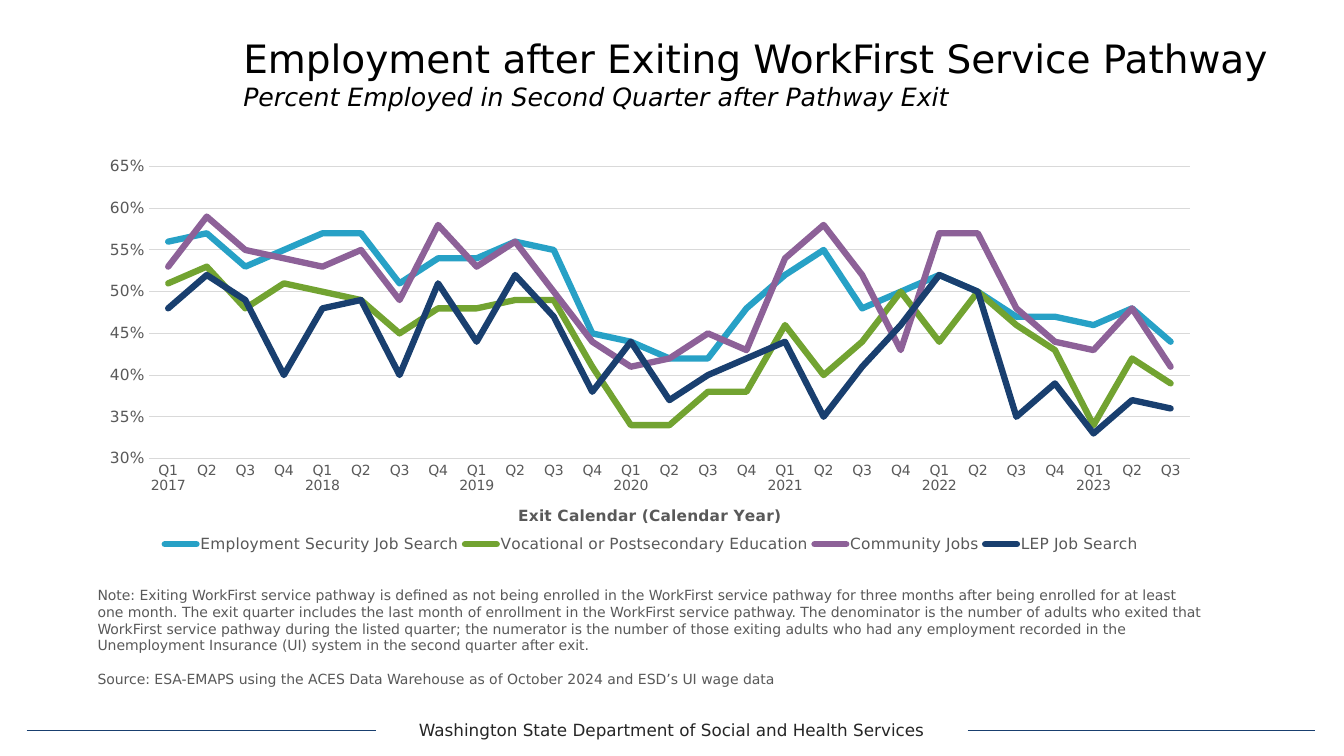
from dataclasses import dataclass

from lxml import etree
from pptx import Presentation
from pptx import util as u
from pptx.chart import data as feed
from pptx.dml.color import RGBColor
from pptx.enum import chart as kinds, shapes, text
from pptx.oxml import ns

Pt = u.Pt
FONT = "DejaVu Sans"
BLACK = RGBColor(0x00, 0x00, 0x00)
DARK = RGBColor(0x26, 0x26, 0x26)
GRAY = RGBColor(0x59, 0x59, 0x59)
PALE = RGBColor(0xD9, 0xD9, 0xD9)
NAVY = RGBColor(0x19, 0x3F, 0x6F)
TEAL = RGBColor(0x27, 0xA1, 0xC6)
GREEN = RGBColor(0x72, 0xA3, 0x31)
PLUM = RGBColor(0x8D, 0x61, 0x98)

NOTE = (
    "Note: Exiting WorkFirst service pathway is defined as not being enrolled in the "
    "WorkFirst service pathway for three months after being enrolled for at least one month. "
    "The exit quarter includes the last month of enrollment in the WorkFirst service pathway. "
    "The denominator is the number of adults who exited that WorkFirst service pathway during "
    "the listed quarter; the numerator is the number of those exiting adults who had any "
    "employment recorded in the Unemployment Insurance (UI) system in the second quarter after exit."
)
SOURCE = "Source: ESA-EMAPS using the ACES Data Warehouse as of October 2024 and ESD’s UI wage data"


@dataclass
class Box:
    left: float
    top: float
    width: float
    height: float

    def sides(self) -> tuple:
        return Pt(self.left), Pt(self.top), Pt(self.width), Pt(self.height)


@dataclass
class Trend:
    name: str
    color: RGBColor
    rates: list[float]


@dataclass
class Rule:
    start: float
    end: float


CHART = Box(62.6, 105.8, 803.5, 309.6)
PLOT = Box(43.8, 13.2, 743.6, 208.6)
KEY = Box(50.7, 274, 704, 18)
LABEL = Box(305.6, 252.7, 0, 0)
RULES = [Rule(19, 268.6), Rule(691.2, 939.2)]
TRENDS = [
    Trend("Employment Security Job Search", TEAL, [
        0.56, 0.57, 0.53, 0.55, 0.57, 0.57, 0.51, 0.54, 0.54,
        0.56, 0.55, 0.45, 0.44, 0.42, 0.42, 0.48, 0.52, 0.55,
        0.48, 0.5, 0.52, 0.5, 0.47, 0.47, 0.46, 0.48, 0.44]),
    Trend("Vocational or Postsecondary Education", GREEN, [
        0.51, 0.53, 0.48, 0.51, 0.5, 0.49, 0.45, 0.48, 0.48,
        0.49, 0.49, 0.41, 0.34, 0.34, 0.38, 0.38, 0.46, 0.4,
        0.44, 0.5, 0.44, 0.5, 0.46, 0.43, 0.34, 0.42, 0.39]),
    Trend("Community Jobs", PLUM, [
        0.53, 0.59, 0.55, 0.54, 0.53, 0.55, 0.49, 0.58, 0.53,
        0.56, 0.5, 0.44, 0.41, 0.42, 0.45, 0.43, 0.54, 0.58,
        0.52, 0.43, 0.57, 0.57, 0.48, 0.44, 0.43, 0.48, 0.41]),
    Trend("LEP Job Search", NAVY, [
        0.48, 0.52, 0.49, 0.4, 0.48, 0.49, 0.4, 0.51, 0.44,
        0.52, 0.47, 0.38, 0.44, 0.37, 0.4, 0.42, 0.44, 0.35,
        0.41, 0.46, 0.52, 0.5, 0.35, 0.39, 0.33, 0.37, 0.36]),
]


def style(font, size: float, color: RGBColor, bold: bool = False, slant: bool = False) -> None:
    font.name, font.size = FONT, Pt(size)
    font.bold, font.italic = bold, slant
    font.color.rgb = color


def add_run(para, words: str, size: float, color: RGBColor, **looks: bool) -> None:
    run = para.add_run()
    run.text = words
    style(run.font, size, color, **looks)


def add_text(slide, box: Box, lines: list[str], size: float, color: RGBColor,
             align=text.PP_ALIGN.LEFT, gap: float = 0) -> None:
    frame = slide.shapes.add_textbox(*box.sides()).text_frame
    frame.word_wrap = True
    for spot, words in enumerate(lines):
        para = frame.add_paragraph() if spot else frame.paragraphs[0]
        para.alignment = align
        if spot:
            para.space_before = Pt(gap)
        add_run(para, words, size, color)


def add_title(slide) -> None:
    title = slide.shapes.title
    title.left, title.top, title.width, title.height = Box(166.6, 0, 759.6, 104.4).sides()
    frame = title.text_frame
    frame.word_wrap = True
    frame.vertical_anchor = text.MSO_ANCHOR.MIDDLE
    para = frame.paragraphs[0]
    para.alignment = text.PP_ALIGN.LEFT
    add_run(para, "Employment after Exiting WorkFirst Service Pathway", 27.9, BLACK)
    para.add_line_break()
    add_run(para, "Percent Employed in Second Quarter after Pathway Exit", 18, BLACK, slant=True)


def add_rule(slide, rule: Rule) -> None:
    line = slide.shapes.add_connector(
        shapes.MSO_CONNECTOR.STRAIGHT, Pt(rule.start), Pt(521.6), Pt(rule.end), Pt(521.6))
    line.line.color.rgb = NAVY
    line.line.width = Pt(0.75)
    etree.SubElement(line._element.spPr, ns.qn("a:effectLst"))


def place(owner, box: Box, inner: bool = False) -> None:
    for old in owner.findall(ns.qn("c:layout")):
        owner.remove(old)
    layout = etree.Element(ns.qn("c:layout"))
    manual = etree.SubElement(layout, ns.qn("c:manualLayout"))
    parts = [("layoutTarget", "inner")] if inner else []
    parts += [("xMode", "edge"), ("yMode", "edge"),
              ("x", box.left / CHART.width), ("y", box.top / CHART.height)]
    if box.width:
        parts += [("w", box.width / CHART.width), ("h", box.height / CHART.height)]
    for tag, value in parts:
        etree.SubElement(manual, ns.qn(f"c:{tag}")).set("val", str(value))
    ahead = owner.find(ns.qn("c:tx"))
    if ahead is None:
        ahead = owner.find(ns.qn("c:legendPos"))
    if ahead is None:
        owner.insert(0, layout)
    else:
        ahead.addnext(layout)


def add_chart(slide) -> None:
    table = feed.CategoryChartData(number_format="0%")
    table.categories = [
        f"Q{spot % 4 + 1}" + ("" if spot % 4 else f"\n{2017 + spot // 4}")
        for spot in range(len(TRENDS[0].rates))]
    for trend in TRENDS:
        table.add_series(trend.name, trend.rates)
    chart = slide.shapes.add_chart(kinds.XL_CHART_TYPE.LINE, *CHART.sides(), table).chart
    style(chart.font, 10, BLACK)
    chart.has_title = False
    chart.plots[0].vary_by_categories = False
    for line, trend in zip(chart.plots[0].series, TRENDS):
        line.smooth = False
        line.marker.style = kinds.XL_MARKER_STYLE.NONE
        line.format.line.color.rgb = trend.color
        line.format.line.width = Pt(4.5)
        line.format.line._ln.set("cap", "rnd")

    base, side = chart.category_axis, chart.value_axis
    for axis, size in ((base, 10), (side, 11)):
        axis.major_tick_mark = axis.minor_tick_mark = kinds.XL_TICK_MARK.NONE
        style(axis.tick_labels.font, size, GRAY)
    base.has_major_gridlines = False
    side.minimum_scale, side.maximum_scale, side.major_unit = 0.3, 0.65, 0.05
    side.tick_labels.number_format = "0%"
    side.tick_labels.number_format_is_linked = False
    side.format.line.fill.background()
    for edge in (base.format.line, side.major_gridlines.format.line):
        edge.color.rgb = PALE
        edge.width = Pt(0.75)
    label = base.axis_title
    add_run(label.text_frame.paragraphs[0], "Exit Calendar (Calendar Year)", 11, GRAY, bold=True)

    chart.has_legend = True
    key = chart.legend
    key.position = kinds.XL_LEGEND_POSITION.BOTTOM
    key.include_in_layout = False
    style(key.font, 11, GRAY)
    place(chart._chartSpace.chart.plotArea, PLOT, inner=True)
    place(key._element, KEY)
    place(label._element, LABEL)


def main() -> None:
    deck = Presentation()
    deck.slide_width, deck.slide_height = Pt(960), Pt(540)
    slide = deck.slides.add_slide(deck.slide_layouts[5])
    add_text(slide, Box(268.6, 510.5, 422.6, 21.6),
             ["Washington State Department of Social and Health Services"],
             12, DARK, text.PP_ALIGN.CENTER)
    for rule in RULES:
        add_rule(slide, rule)
    add_title(slide)
    add_chart(slide)
    add_text(slide, Box(62.6, 415.4, 803.5, 79.9), [NOTE, SOURCE], 10, GRAY, gap=12)
    deck.save("out.pptx")


if __name__ == "__main__":
    main()
